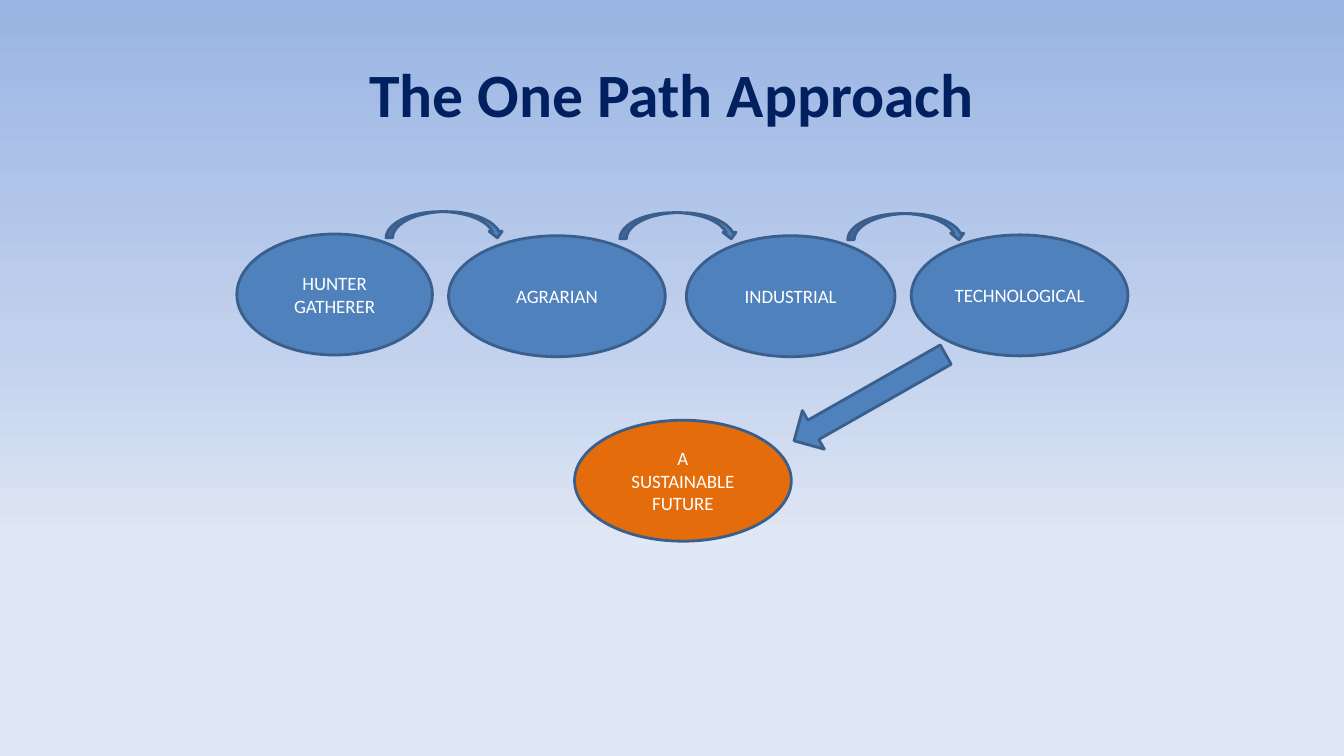
"""Build the One Path Approach slide: four stages leading to a sustainable future."""
from copy import deepcopy

from pptx import Presentation
from pptx.dml.color import RGBColor
from pptx.enum.shapes import MSO_SHAPE
from pptx.enum.text import MSO_ANCHOR, PP_ALIGN
from pptx.util import Pt

TITLE = "The One Path Approach"
STAGES = [
    ("HUNTER\nGATHERER", 169.2, 167.2, 139.7),
    ("AGRARIAN", 320.4, 168.4, 154.8),
    ("INDUSTRIAL", 490.3, 168.4, 149),
    ("TECHNOLOGICAL", 650.9, 167.8, 154.8),
]
GOAL = ("A\nSUSTAINABLE\nFUTURE", 410.4, 300.2, 154.8)
OVAL_H = 86.4
HOPS = [(275.8, 151.2), (442.8, 151.9), (605.5, 152.6)]
HOP_SIZE = (84.2, 18.7)
GOAL_ARROW = (605.5, 221.8, 31.7, 124.6)
GOAL_ARROW_TURN = 60.4

THEME = {
    "font": "Calibri",
    "title": {"size": 44, "color": "002060", "bold": True},
    "label": {"size": 13.5, "color": "FFFFFF", "bold": False},
    "stage": "4F81BD",
    "goal": "E46C0A",
    "line": "3A5F8C",
    "line_width": 2,
    "background": [(0, "9AB5E4"), (0.46, "C2D1ED"), (0.73, "E1E8F5")],
}


def rgb(value):
    """Turn a hex string into a colour."""
    return RGBColor.from_string(value)


def set_attrs(obj, values):
    """Set each named attribute on an object."""
    for name, value in values.items():
        setattr(obj, name, value)


def write(tf, text, style, inset):
    """Write centred paragraphs into a text frame."""
    x, y = inset
    set_attrs(tf, {
        "word_wrap": True, "vertical_anchor": MSO_ANCHOR.MIDDLE,
        "margin_left": Pt(x), "margin_right": Pt(x),
        "margin_top": Pt(y), "margin_bottom": Pt(y),
    })
    tf.text = text
    for p in tf.paragraphs:
        p.alignment = PP_ALIGN.CENTER
        for r in p.runs:
            set_attrs(r.font, {"name": THEME["font"], "size": Pt(style["size"]),
                               "bold": style["bold"]})
            r.font.color.rgb = rgb(style["color"])


def add_outlined(s, kind, box, fill):
    """Add a filled preset shape with the common outline."""
    sp = s.shapes.add_shape(kind, *map(Pt, box))
    sp.shadow.inherit = False
    sp.fill.solid()
    sp.fill.fore_color.rgb = rgb(fill)
    sp.line.color.rgb = rgb(THEME["line"])
    sp.line.width = Pt(THEME["line_width"])
    return sp


def add_oval(s, oval, fill):
    """Add a labelled oval."""
    text, x, y, w = oval
    sp = add_outlined(s, MSO_SHAPE.OVAL, (x, y, w, OVAL_H), fill)
    write(sp.text_frame, text, THEME["label"], (5.4, 2.7))


def paint_background(s):
    """Fill the slide with a gradient running from top to bottom."""
    fill = s.background.fill
    fill.gradient()
    fill.gradient_angle = 270
    first = s.element.xpath(".//p:bg//a:gs")[0]
    first.addnext(deepcopy(first))
    for stop, (position, color) in zip(fill.gradient_stops, THEME["background"]):
        stop.position = position
        stop.color.rgb = rgb(color)


def main():
    """Assemble and save the slide."""
    prs = Presentation()
    set_attrs(prs, {"slide_width": Pt(960), "slide_height": Pt(540)})
    s = prs.slides.add_slide(prs.slide_layouts[5])
    paint_background(s)

    title = s.shapes.title
    set_attrs(title, {"left": Pt(48), "top": Pt(21.6),
                      "width": Pt(864), "height": Pt(90)})
    write(title.text_frame, TITLE, THEME["title"], (7.2, 3.6))

    for stage in STAGES:
        add_oval(s, stage, THEME["stage"])
    for hop in HOPS:
        add_outlined(s, MSO_SHAPE.CURVED_DOWN_ARROW, hop + HOP_SIZE, THEME["stage"])
    arrow = add_outlined(s, MSO_SHAPE.DOWN_ARROW, GOAL_ARROW, THEME["stage"])
    arrow.rotation = GOAL_ARROW_TURN
    add_oval(s, GOAL, THEME["goal"])

    prs.save("out.pptx")


if __name__ == "__main__":
    main()
